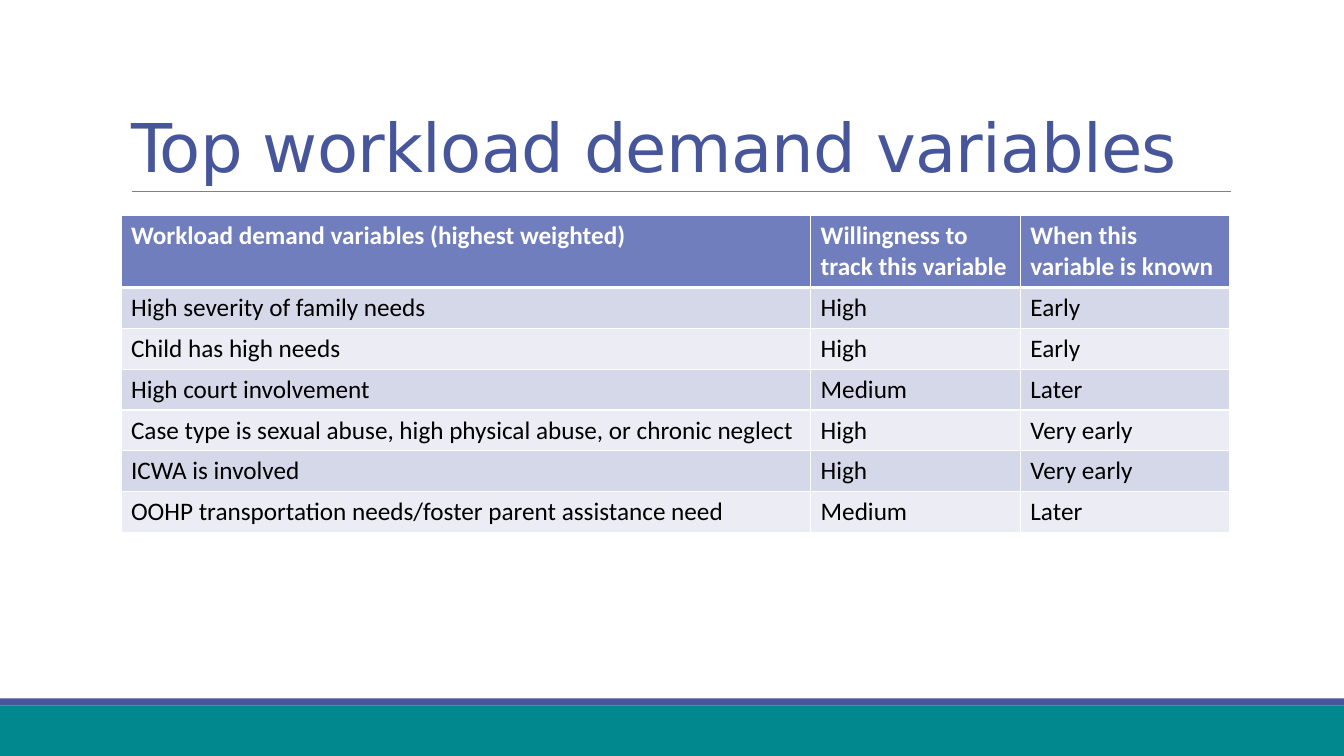
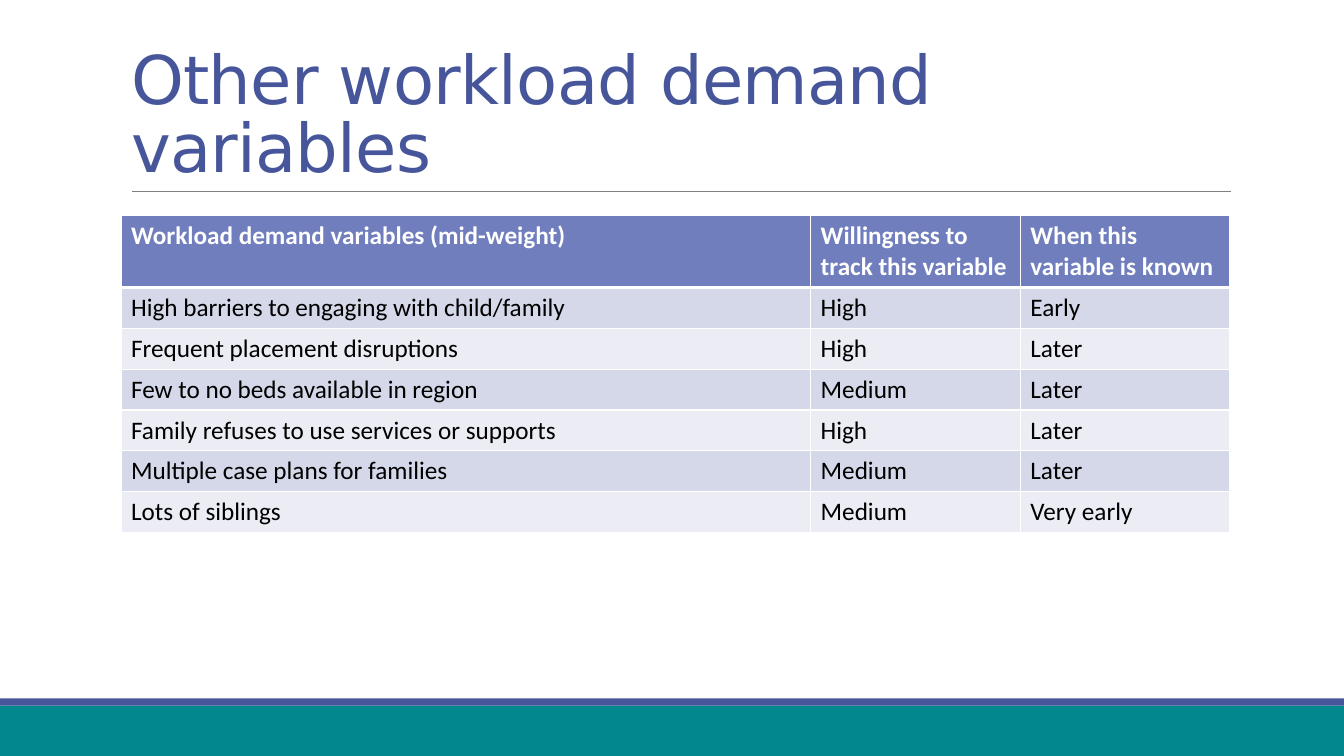
"""Build two slides of workload demand variables."""
from lxml import etree
from pptx import Presentation
from pptx.dml.color import RGBColor
from pptx.enum.shapes import MSO_CONNECTOR, MSO_SHAPE
from pptx.enum.text import MSO_ANCHOR, MSO_AUTO_SIZE, PP_ALIGN
from pptx.oxml.ns import qn
from pptx.util import Inches, Pt

RECT = MSO_SHAPE.RECTANGLE
LINE = MSO_CONNECTOR.STRAIGHT
LEFT = PP_ALIGN.LEFT
BOTTOM = MSO_ANCHOR.BOTTOM
NO_FIT = MSO_AUTO_SIZE.NONE

COLORS = {
    "teal": "00888E", "indigo": "47569A", "rule": "808080", "head": "707EBD",
    "dark": "D5D8E8", "light": "EBECF4", "white": "FFFFFF", "black": "000000",
}
TITLE_FONT, BODY_FONT = "DejaVu Sans", "Calibri"
WIDE, HIGH = 13.33, 7.5
TITLE_BOX = (1.2, 0.31, 11, 1.59)
GRID_BOX = (1.2, 2.14, 11)
COLS = (6.84, 2.08, 2.08)
HEAD_HIGH, ROW_HIGH = 0.7, 0.4

TRACK = ("Willingness to track this variable", "When this variable is known")
SLIDES = [
    ("Top workload demand variables", [
        ("Workload demand variables (highest weighted)", *TRACK),
        ("High severity of family needs", "High", "Early"),
        ("Child has high needs", "High", "Early"),
        ("High court involvement", "Medium", "Later"),
        ("Case type is sexual abuse, high physical abuse, or chronic neglect",
         "High", "Very early"),
        ("ICWA is involved", "High", "Very early"),
        ("OOHP transportation needs/foster parent assistance need",
         "Medium", "Later"),
    ]),
    ("Other workload demand variables", [
        ("Workload demand variables (mid-weight)", *TRACK),
        ("High barriers to engaging with child/family", "High", "Early"),
        ("Frequent placement disruptions", "High", "Later"),
        ("Few to no beds available in region", "Medium", "Later"),
        ("Family refuses to use services or supports", "High", "Later"),
        ("Multiple case plans for families", "Medium", "Later"),
        ("Lots of siblings", "Medium", "Very early"),
    ]),
]


def color(name):
    """Return the named colour."""
    return RGBColor.from_string(COLORS[name])


def add_run(para, text, font, size, tint, bold=False):
    """Add one styled run to a paragraph."""
    run = para.add_run()
    run.text = text
    run.font.name = font
    run.font.size = Pt(size)
    run.font.bold = bold
    run.font.color.rgb = color(tint)
    return run


def add_band(slide, top, height, tint):
    """Add a plain band across the slide."""
    band = slide.shapes.add_shape(
        RECT, 0, Inches(top), Inches(WIDE), Inches(height))
    band.shadow.inherit = False
    band.fill.solid()
    band.fill.fore_color.rgb = color(tint)
    band.line.fill.background()


def add_frame(slide):
    """Add the footer bands and the rule below the title."""
    left, top, width, height = TITLE_BOX
    add_band(slide, HIGH - 0.5, 0.5, "teal")
    add_band(slide, HIGH - 0.57, 0.07, "indigo")
    start, level = left + 0.11, top + height
    rule = slide.shapes.add_connector(
        LINE, Inches(start), Inches(level),
        Inches(start + 10.9), Inches(level))
    rule.line.color.rgb = color("rule")
    rule.line.width = Pt(0.5)
    etree.SubElement(rule._element.spPr, qn("a:effectLst"))


def set_title(slide, text, box):
    """Place and style the title in its box."""
    title = slide.shapes.title
    title.left, title.top, title.width, title.height = map(Inches, box)
    frame = title.text_frame
    frame.word_wrap = True
    frame.auto_size = NO_FIT
    frame.vertical_anchor = BOTTOM
    para = frame.paragraphs[0]
    para.alignment = LEFT
    para.line_spacing = 0.85
    run = add_run(para, text, TITLE_FONT, 48, "indigo")
    run._r.get_or_add_rPr().set("spc", "-50")


def set_edges(cell, above, below):
    """Draw white cell borders of the given top and bottom widths."""
    props = cell._tc.get_or_add_tcPr()
    sides = (("L", 1), ("R", 1), ("T", above), ("B", below))
    for spot, (side, width) in enumerate(sides):
        edge = etree.Element(qn(f"a:ln{side}"), w=str(Pt(width)))
        fill = etree.SubElement(edge, qn("a:solidFill"))
        etree.SubElement(fill, qn("a:srgbClr"), val=COLORS["white"])
        props.insert(spot, edge)


def add_grid(slide, rows, box):
    """Add the table of variables in its box."""
    left, top, width = box
    height = HEAD_HIGH + ROW_HIGH * (len(rows) - 1)
    grid = slide.shapes.add_table(
        len(rows), len(COLS), Inches(left), Inches(top),
        Inches(width), Inches(height)).table
    for col, size in zip(grid.columns, COLS):
        col.width = Inches(size)
    for i, row in enumerate(rows):
        head = i == 0
        grid.rows[i].height = Inches(HEAD_HIGH if head else ROW_HIGH)
        tint = "head" if head else "dark" if i % 2 else "light"
        for j, text in enumerate(row):
            cell = grid.cell(i, j)
            cell.fill.solid()
            cell.fill.fore_color.rgb = color(tint)
            set_edges(cell, 3 if i == 1 else 1, 3 if head else 1)
            add_run(cell.text_frame.paragraphs[0], text, BODY_FONT, 18,
                    "white" if head else "black", head)


def add_slide(deck, title, rows):
    """Add one slide with a title and a table."""
    slide = deck.slides.add_slide(deck.slide_layouts[5])
    add_frame(slide)
    set_title(slide, title, TITLE_BOX)
    add_grid(slide, rows, GRID_BOX)


def main():
    """Build and save the deck."""
    deck = Presentation()
    deck.slide_width, deck.slide_height = Inches(WIDE), Inches(HIGH)
    for title, rows in SLIDES:
        add_slide(deck, title, rows)
    deck.save("out.pptx")


if __name__ == "__main__":
    main()
